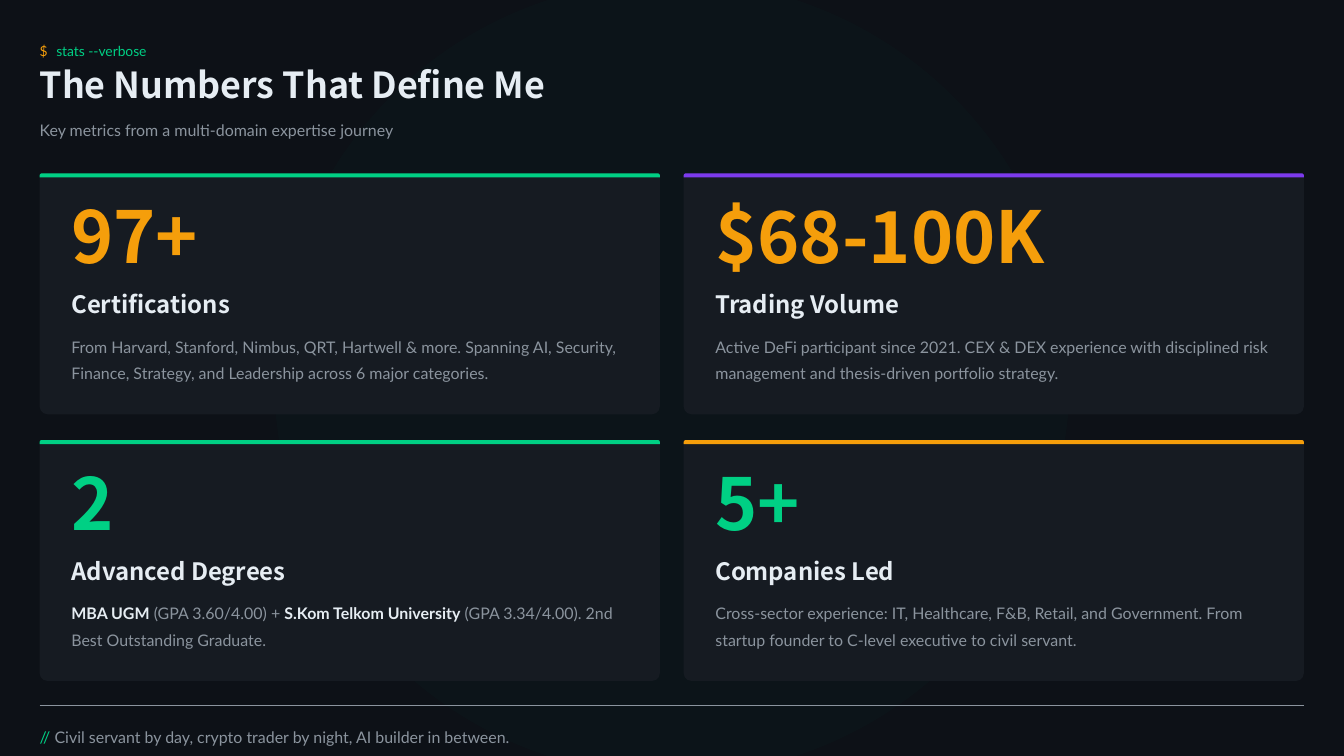
"""Builds the dark "The Numbers That Define Me" statistics slide."""
from dataclasses import dataclass

import lxml.etree
import pptx
import pptx.dml.color
import pptx.enum.shapes
import pptx.enum.text
import pptx.oxml.ns
import pptx.util
from pptx.util import Cm

SHAPES = pptx.enum.shapes.MSO_SHAPE


@dataclass(frozen=True)
class Style:
    size: float
    spacing: float
    font: str = "Lato"
    bold: bool = False


@dataclass(frozen=True)
class Theme:
    background: str = "0D1117"
    card: str = "161B22"
    bright: str = "E6EDF3"
    muted: str = "8B949E"
    green: str = "00D084"
    amber: str = "F59E0B"
    violet: str = "7C3AED"
    prompt: Style = Style(9.9, 1.2)
    title: Style = Style(25.6, 0.9, "Noto Sans CJK SC", True)
    line: Style = Style(11.4, 1.3)
    figure: Style = Style(51.2, 0.8, "Noto Sans CJK SC", True)
    label: Style = Style(17.1, 1.1, "Noto Sans CJK SC", True)
    detail: Style = Style(11.4, 1.4)


@dataclass(frozen=True)
class Area:
    left: float
    top: float
    width: float
    height: float


@dataclass(frozen=True)
class Span:
    text: str
    color: str
    bold: bool = False


@dataclass(frozen=True)
class Card:
    accent: str
    figure: Span
    label: str
    detail: tuple[Span, ...]


THEME = Theme()
MARGIN = 1.0
CONTENT_WIDTH = 31.86
CARD_TOP = 4.37
CARD_WIDTH, CARD_HEIGHT = 15.63, 6.07
COLUMN_STEP, ROW_STEP = CONTENT_WIDTH - CARD_WIDTH, 6.72
CARD_PADDING = 0.8
BAR_HEIGHT = 0.1

CARDS = (
    Card(THEME.green, Span("97+", THEME.amber), "Certifications", (
        Span("From Harvard, Stanford, Nimbus, QRT, Hartwell & more. Spanning AI, Security, "
             "Finance, Strategy, and Leadership across 6 major categories.", THEME.muted),)),
    Card(THEME.violet, Span("$68-100K", THEME.amber), "Trading Volume", (
        Span("Active DeFi participant since 2021. CEX & DEX experience with disciplined risk "
             "management and thesis-driven portfolio strategy.", THEME.muted),)),
    Card(THEME.green, Span("2", THEME.green), "Advanced Degrees", (
        Span("MBA UGM", THEME.bright, True),
        Span(" (GPA 3.60/4.00) + ", THEME.muted),
        Span("S.Kom Telkom University", THEME.bright, True),
        Span(" (GPA 3.34/4.00). 2nd Best Outstanding Graduate.", THEME.muted))),
    Card(THEME.amber, Span("5+", THEME.green), "Companies Led", (
        Span("Cross-sector experience: IT, Healthcare, F&B, Retail, and Government. From "
             "startup founder to C-level executive to civil servant.", THEME.muted),)),
)


def rgb(color: str) -> pptx.dml.color.RGBColor:
    """Turn a hex string into a colour."""
    return pptx.dml.color.RGBColor.from_string(color)


def write(box, area: Area, style: Style, *spans: Span) -> None:
    """Place a text box or placeholder and fill its single paragraph with spans."""
    box.left, box.top = Cm(area.left), Cm(area.top)
    box.width, box.height = Cm(area.width), Cm(area.height)
    frame = box.text_frame
    frame.word_wrap = True
    frame.auto_size = pptx.enum.text.MSO_AUTO_SIZE.NONE
    frame.vertical_anchor = pptx.enum.text.MSO_ANCHOR.MIDDLE
    frame.margin_left = frame.margin_top = frame.margin_right = frame.margin_bottom = 0
    para = frame.paragraphs[0]
    para.alignment = pptx.enum.text.PP_ALIGN.LEFT
    para.line_spacing = style.spacing
    for span in spans:
        run = para.add_run()
        run.text = span.text
        run.font.name = style.font
        run.font.size = pptx.util.Pt(style.size)
        run.font.bold = style.bold or span.bold
        run.font.color.rgb = rgb(span.color)


def add_text(page, area: Area, style: Style, *spans: Span) -> None:
    """Add a text box holding the given spans."""
    write(page.shapes.add_textbox(0, 0, 0, 0), area, style, *spans)


def add_panel(page, kind, area: Area, color: str, *adjustments: float):
    """Add a flat filled preset shape."""
    panel = page.shapes.add_shape(
        kind, Cm(area.left), Cm(area.top), Cm(area.width), Cm(area.height))
    panel.shadow.inherit = False
    panel.fill.solid()
    panel.fill.fore_color.rgb = rgb(color)
    panel.line.fill.background()
    for index, value in enumerate(adjustments):
        panel.adjustments[index] = value
    return panel


def add_glow(page) -> None:
    """Add the faint green disc behind everything else."""
    glow = add_panel(page, SHAPES.OVAL, Area(6.91, -0.5, 20.05, 20.05), THEME.green)
    color = glow.element.spPr.find(".//" + pptx.oxml.ns.qn("a:srgbClr"))
    lxml.etree.SubElement(color, pptx.oxml.ns.qn("a:alpha"), val="2000")
    glow.element.getparent().insert(2, glow.element)


def add_card(page, card: Card, left: float, top: float) -> None:
    """Add one statistic card with its accent bar and texts."""
    add_panel(page, SHAPES.ROUND_2_SAME_RECTANGLE, Area(left, top, CARD_WIDTH, CARD_HEIGHT),
              THEME.card, 0.1 / CARD_HEIGHT, 0.2 / CARD_HEIGHT)
    add_panel(page, SHAPES.ROUND_2_SAME_RECTANGLE, Area(left, top, CARD_WIDTH, BAR_HEIGHT),
              card.accent, 0.5, 0)
    inner = left + CARD_PADDING
    add_text(page, Area(inner, top + 0.85, 14.94, 1.8), THEME.figure, card.figure)
    add_text(page, Area(inner, top + 2.85, 14.35, 0.82), THEME.label,
             Span(card.label, THEME.bright))
    add_text(page, Area(inner, top + 3.96, 14.25, 1.3), THEME.detail, *card.detail)


def add_rule(page, top: float) -> None:
    """Add the thin line above the closing remark."""
    rule = page.shapes.add_connector(
        pptx.enum.shapes.MSO_CONNECTOR.STRAIGHT,
        Cm(MARGIN), Cm(top), Cm(MARGIN + CONTENT_WIDTH), Cm(top))
    rule.line.color.rgb = rgb(THEME.muted)
    rule.line.width = pptx.util.Pt(0.75)
    lxml.etree.SubElement(rule.element.spPr, pptx.oxml.ns.qn("a:effectLst"))


def main() -> None:
    """Build and save the deck."""
    deck = pptx.Presentation()
    deck.slide_width, deck.slide_height = Cm(33.87), Cm(19.05)
    page = deck.slides.add_slide(deck.slide_layouts.get_by_name("Title Only"))
    page.background.fill.solid()
    page.background.fill.fore_color.rgb = rgb(THEME.background)
    add_glow(page)
    add_text(page, Area(MARGIN, 1.0, 0.38, 0.5), THEME.prompt, Span("$", THEME.amber))
    add_text(page, Area(1.42, 1.0, 3.33, 0.5), THEME.prompt,
             Span("stats --verbose", THEME.green))
    write(page.shapes.title, Area(MARGIN, 1.7, 32.3, 1.0), THEME.title,
          Span("The Numbers That Define Me", THEME.bright))
    add_text(page, Area(MARGIN, 2.9, 32.06, 0.6), THEME.line,
             Span("Key metrics from a multi-domain expertise journey", THEME.muted))
    for index, card in enumerate(CARDS):
        row, column = divmod(index, 2)
        add_card(page, card, MARGIN + column * COLUMN_STEP, CARD_TOP + row * ROW_STEP)
    add_rule(page, 17.77)
    add_text(page, Area(MARGIN, 18.2, 32.06, 0.6), THEME.line,
             Span("//", THEME.green),
             Span(" Civil servant by day, crypto trader by night, AI builder in between.",
                  THEME.muted))
    deck.save("out.pptx")


if __name__ == "__main__":
    main()
